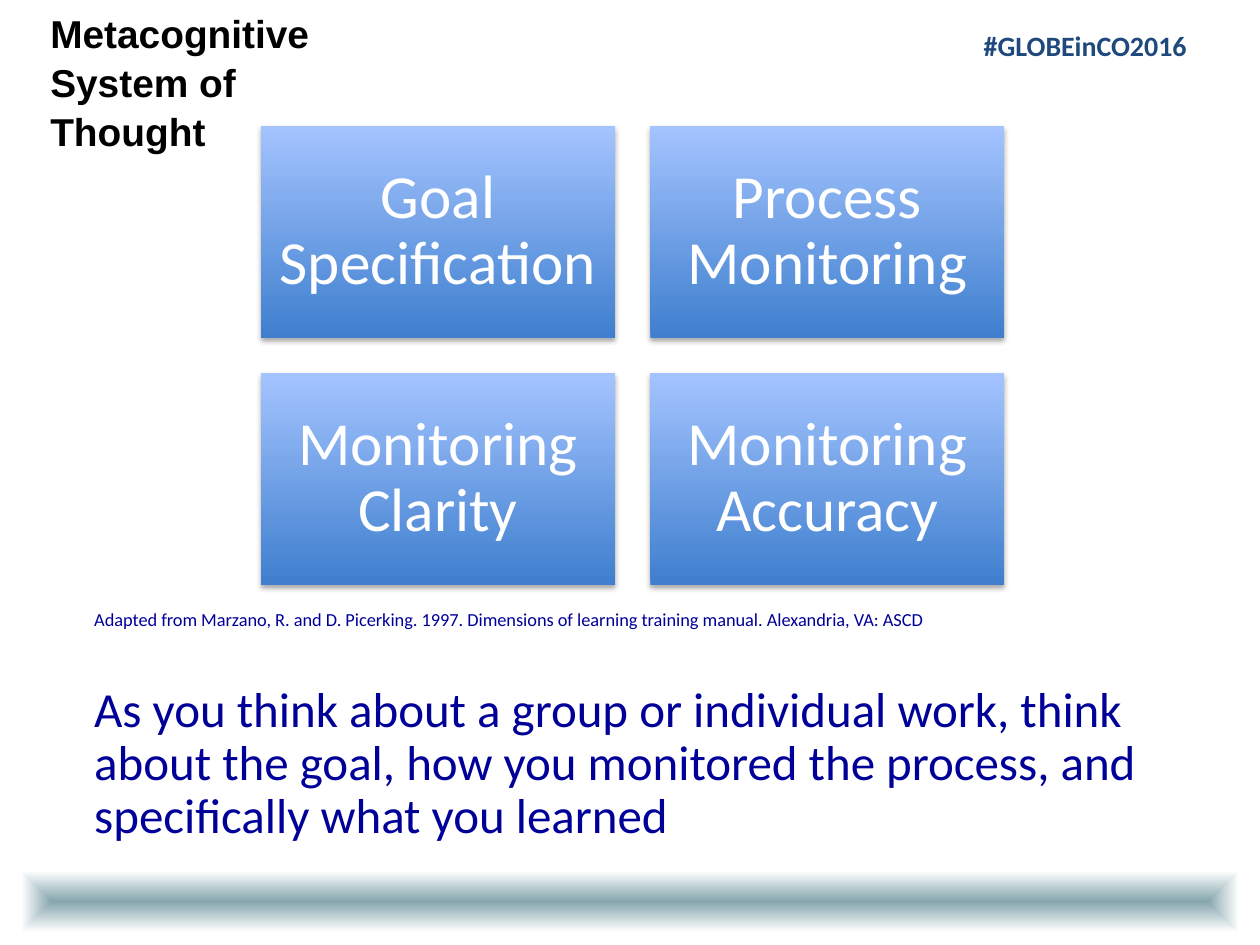
import pptx
import pptx.dml.color
import pptx.enum.shapes
import pptx.enum.text
import pptx.oxml
import pptx.oxml.ns
import pptx.util
from pptx.dml.color import RGBColor
from pptx.enum.text import MSO_ANCHOR, MSO_AUTO_SIZE, PP_ALIGN
from pptx.util import Cm, Pt

TITLE = "Metacognitive System of Thought"
HASHTAG = "#GLOBEinCO2016"
STAGES = [
    ["Goal Specification", "Process Monitoring"],
    ["Monitoring Clarity", "Monitoring Accuracy"],
]
CITATION = ("Adapted from Marzano, R. and D. Picerking. 1997. Dimensions of "
            "learning training manual. Alexandria, VA: ASCD")
PROMPT = ("As you think about a group or individual work, think about the goal, "
          "how you monitored the process, and specifically what you learned")

BLACK = RGBColor(0x00, 0x00, 0x00)
WHITE = RGBColor(0xFF, 0xFF, 0xFF)
NAVY = RGBColor(0x1F, 0x49, 0x7D)
INK_BLUE = RGBColor(0x00, 0x00, 0x99)
DEEP_BLUE = RGBColor(0x3F, 0x7F, 0xCE)
PALE_BLUE = RGBColor(0xA4, 0xC4, 0xFF)
TEAL = RGBColor(0x86, 0xA5, 0xAD)

GRID_LEFT, GRID_TOP = 5.26, 2.54
CARD_WIDTH, CARD_HEIGHT, GAP = 7.14, 4.27, 0.71

DRAWING = pptx.oxml.ns.nsdecls("a")
CENTRE_PATH = (f'<a:path {DRAWING} path="shape">'
               '<a:fillToRect l="50000" t="50000" r="50000" b="50000"/></a:path>')
SOFT_SHADOW = (f'<a:outerShdw {DRAWING} blurRad="40000" dist="23000" dir="5400000" '
               'rotWithShape="0"><a:srgbClr val="000000"><a:alpha val="35000"/>'
               '</a:srgbClr></a:outerShdw>')


def write(para, text, *, size, color, font="Calibri", bold=False,
          align=PP_ALIGN.LEFT, spacing=1.0, before=0):
    para.alignment = align
    para.line_spacing = spacing
    para.space_before = Pt(before)
    span = para.add_run()
    span.text = text
    span.font.name = font
    span.font.size = Pt(size)
    span.font.bold = bold
    span.font.color.rgb = color


def place(shape, left, top, width, height):
    shape.left, shape.top = Cm(left), Cm(top)
    shape.width, shape.height = Cm(width), Cm(height)


def add_text_box(page, left, top, width, height):
    box = page.shapes.add_textbox(Cm(left), Cm(top), Cm(width), Cm(height))
    box.text_frame.word_wrap = True
    return box.text_frame


def add_gradient_box(page, left, top, width, height, first, last):
    box = page.shapes.add_shape(pptx.enum.shapes.MSO_SHAPE.RECTANGLE,
                                Cm(left), Cm(top), Cm(width), Cm(height))
    box.line.fill.background()
    box.shadow.inherit = False
    box.fill.gradient()
    box.fill.gradient_angle = 90
    for stop, color, position in zip(box.fill.gradient_stops, (first, last), (0, 1)):
        stop.color.rgb = color
        stop.position = position
    return box


def add_footer_band(page):
    band = add_gradient_box(page, 0.43, 17.55, 24.54, 1.24, TEAL, WHITE)
    linear = band._element.spPr.find(".//" + pptx.oxml.ns.qn("a:lin"))
    linear.getparent().replace(linear, pptx.oxml.parse_xml(CENTRE_PATH))


def add_card(page, text, row, column):
    card = add_gradient_box(page, GRID_LEFT + column * (CARD_WIDTH + GAP),
                            GRID_TOP + row * (CARD_HEIGHT + GAP),
                            CARD_WIDTH, CARD_HEIGHT, DEEP_BLUE, PALE_BLUE)
    effects = card._element.spPr.find(pptx.oxml.ns.qn("a:effectLst"))
    effects.append(pptx.oxml.parse_xml(SOFT_SHADOW))
    frame = card.text_frame
    frame.word_wrap = True
    frame.vertical_anchor = MSO_ANCHOR.MIDDLE
    frame.margin_left = frame.margin_right = Cm(0.35)
    frame.margin_top = frame.margin_bottom = Cm(0.38)
    write(frame.paragraphs[0], text, size=35, color=WHITE,
          align=PP_ALIGN.CENTER, spacing=0.9)


def main():
    deck = pptx.Presentation()
    deck.slide_width, deck.slide_height = Cm(25.4), Cm(19.05)
    page = deck.slides.add_slide(deck.slide_layouts.get_by_name("Title Only"))

    add_footer_band(page)
    hashtag = add_text_box(page, 19.58, 0.46, 4.78, 0.94)
    write(hashtag.paragraphs[0], HASHTAG, size=16, color=NAVY, bold=True)

    title = page.shapes.title
    place(title, 0.76, 0.38, 7.19, 2.51)
    title.text_frame.auto_size = MSO_AUTO_SIZE.NONE
    title.text_frame.vertical_anchor = MSO_ANCHOR.MIDDLE
    write(title.text_frame.paragraphs[0], TITLE, size=22.2, color=BLACK,
          font="Arial", bold=True, spacing=1.05)

    for row, stages in enumerate(STAGES):
        for column, stage in enumerate(stages):
            add_card(page, stage, row, column)

    notes = add_text_box(page, 1.65, 11.79, 22, 5.38)
    notes.margin_top = Cm(0.53)
    write(notes.paragraphs[0], CITATION, size=10.5, color=INK_BLUE, spacing=0.9)
    write(notes.add_paragraph(), PROMPT, size=28, color=INK_BLUE,
          spacing=0.9, before=31)

    deck.save("out.pptx")


if __name__ == "__main__":
    main()
